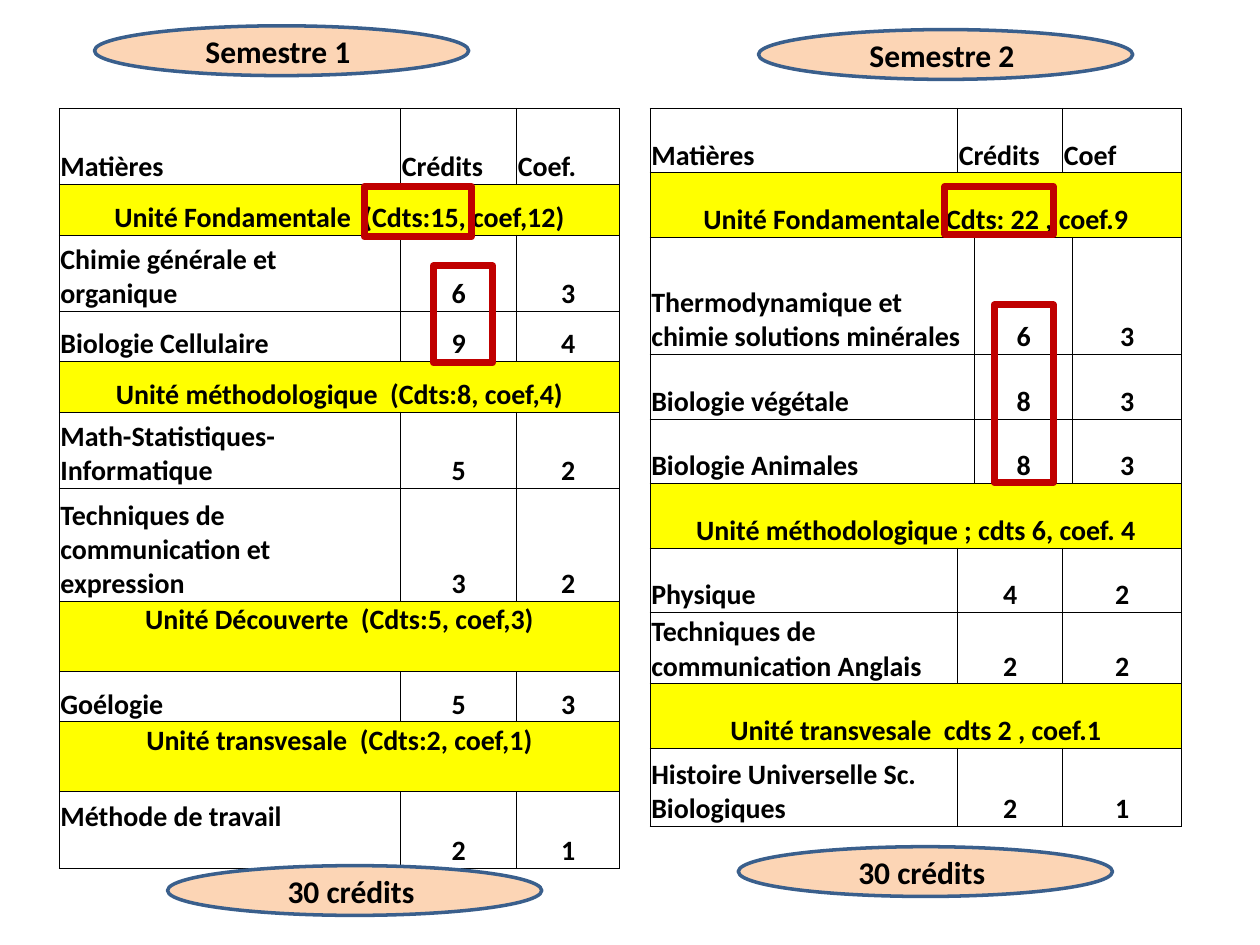
from pptx import Presentation
from pptx.dml.color import RGBColor
from pptx.enum.shapes import MSO_SHAPE
from pptx.enum.text import MSO_ANCHOR, PP_ALIGN
from pptx.oxml import parse_xml
from pptx.oxml.ns import nsdecls
from pptx.util import Inches, Pt

OVAL, RECT = MSO_SHAPE.OVAL, MSO_SHAPE.RECTANGLE
LEFT, CENTER = PP_ALIGN.LEFT, PP_ALIGN.CENTER
MIDDLE, BOTTOM = MSO_ANCHOR.MIDDLE, MSO_ANCHOR.BOTTOM

COLORS = {"ink": "000000", "peach": "FCD5B5", "rim": "3A5F8C",
          "unit": "FFFF00", "mark": "C00000"}
FONT = "Calibri"
WIDE, HIGH = Inches(10), Inches(7.5)
COLS = 100
STEP = WIDE / COLS
PAD = 0.1
LIFT = 2.7
WHOLE = (3,)
EVEN = (1, 1, 1)
ALL = (5,)
HEAD = (1, 2, 2)
WIDER = (2, 2, 1)

FIRST = {
    "box": (4.7, 8.6, 44.5, 60.2),
    "cols": (27.1, 9.2, 8.2),
    "rows": [
        (6.05, EVEN, ["Matières", "Crédits", "Coef."], 0),
        (4, WHOLE, ["Unité Fondamentale  (Cdts:15, coef,12)"], 0),
        (6.05, EVEN, ["Chimie générale et organique", "6", "3"], 0),
        (4, EVEN, ["Biologie Cellulaire", "9", "4"], 0),
        (4, WHOLE, ["Unité méthodologique  (Cdts:8, coef,4)"], 0),
        (6.05, EVEN, ["Math-Statistiques-Informatique", "5", "2"], 0),
        (9, EVEN, ["Techniques de communication et expression", "3", "2"], 0),
        (5.55, WHOLE, ["Unité Découverte  (Cdts:5, coef,3)"], LIFT),
        (4, EVEN, ["Goélogie", "5", "3"], 0),
        (5.55, WHOLE, ["Unité transvesale  (Cdts:2, coef,1)"], LIFT),
        (6.05, EVEN, ["Méthode de travail", "2", "1"], LIFT),
    ],
}
SECOND = {
    "box": (51.6, 8.6, 42.2, 57),
    "cols": (24.4, 1.35, 7, 0.8, 8.65),
    "rows": [
        (5.12, HEAD, ["Matières", "Crédits", "Coef"], 0),
        (5.12, ALL, ["Unité Fondamentale Cdts: 22 , coef.9"], 0),
        (9.3, WIDER, ["Thermodynamique et chimie solutions minérales", "6", "3"], 0),
        (5.12, WIDER, ["Biologie végétale", "8", "3"], 0),
        (5.12, WIDER, ["Biologie Animales", "8", "3"], 0),
        (5.12, ALL, ["Unité méthodologique ; cdts 6, coef. 4"], 0),
        (5.12, HEAD, ["Physique", "4", "2"], 0),
        (5.65, HEAD, ["Techniques de communication Anglais", "2", "2"], 0),
        (5.12, ALL, ["Unité transvesale  cdts 2 , coef.1"], 0),
        (6.2, HEAD, ["Histoire Universelle Sc. Biologiques", "2", "1"], 0),
    ],
}
OVALS = [
    ("Semestre 1 ", (7.5, 2.05, 29.7, 3.95)),
    ("Semestre 2 ", (60.2, 2.35, 29.7, 3.95)),
    ("30 crédits ", (58.6, 67.2, 29.7, 3.95)),
    ("30 crédits ", (13.3, 68.7, 29.7, 3.95)),
]
MARKS = [
    (34.4, 21.1, 4.7, 7.7),
    (78.9, 24.2, 4.7, 14.1),
    (28.9, 14.8, 8.5, 4),
    (75, 14.8, 8.6, 3.8),
]


def size(units):
    return int(units * STEP)


def color(name):
    return RGBColor.from_string(COLORS[name])


def write(frame, text, points, align):
    para = frame.paragraphs[0]
    para.alignment = align
    run = para.add_run()
    run.text = text
    run.font.name = FONT
    run.font.size = Pt(points)
    run.font.bold = True
    run.font.color.rgb = color("ink")


def shape(slide, kind, box, fill, line, width):
    item = slide.shapes.add_shape(kind, *map(size, box))
    item.shadow.inherit = False
    if fill:
        item.fill.solid()
        item.fill.fore_color.rgb = color(fill)
    else:
        item.fill.background()
    item.line.color.rgb = color(line)
    item.line.width = Pt(width)
    return item


def oval(slide, box, text):
    frame = shape(slide, OVAL, box, "peach", "rim", 2).text_frame
    frame.word_wrap = True
    frame.vertical_anchor = MIDDLE
    write(frame, text, 18, CENTER)


def dress(cell, unit, lift):
    props = cell._tc.get_or_add_tcPr()
    for side in ("lnL", "lnR", "lnT", "lnB"):
        props.append(parse_xml(
            f'<a:{side} {nsdecls("a")} w="{Pt(0.5)}"><a:solidFill>'
            f'<a:srgbClr val="{COLORS["ink"]}"/></a:solidFill></a:{side}>'))
    if unit:
        cell.fill.solid()
        cell.fill.fore_color.rgb = color("unit")
    else:
        cell.fill.background()
    cell.margin_left = cell.margin_right = cell.margin_top = size(PAD)
    cell.margin_bottom = size(lift)
    cell.vertical_anchor = BOTTOM


def grid(slide, box, cols, rows):
    table = slide.shapes.add_table(len(rows), len(cols), *map(size, box)).table
    table.first_row = table.horz_banding = False
    for col, width in zip(table.columns, cols):
        col.width = size(width)
    for r, (height, spans, texts, lift) in enumerate(rows):
        table.rows[r].height = size(height)
        unit = len(texts) == 1
        for c in range(len(cols)):
            high = lift if c == 0 else 0
            dress(table.cell(r, c), unit, high)
        start = 0
        for span, text in zip(spans, texts):
            cell = table.cell(r, start)
            if span > 1:
                cell.merge(table.cell(r, start + span - 1))
            left = not unit and (r == 0 or start == 0)
            write(cell.text_frame, text, 16, LEFT if left else CENTER)
            start += span


def main():
    deck = Presentation()
    deck.slide_width, deck.slide_height = WIDE, HIGH
    slide = deck.slides.add_slide(deck.slide_layouts[6])
    for term in (FIRST, SECOND):
        grid(slide, **term)
    for text, box in OVALS:
        oval(slide, box, text)
    for box in MARKS:
        shape(slide, RECT, box, None, "mark", 4)
    deck.save("out.pptx")


if __name__ == "__main__":
    main()
